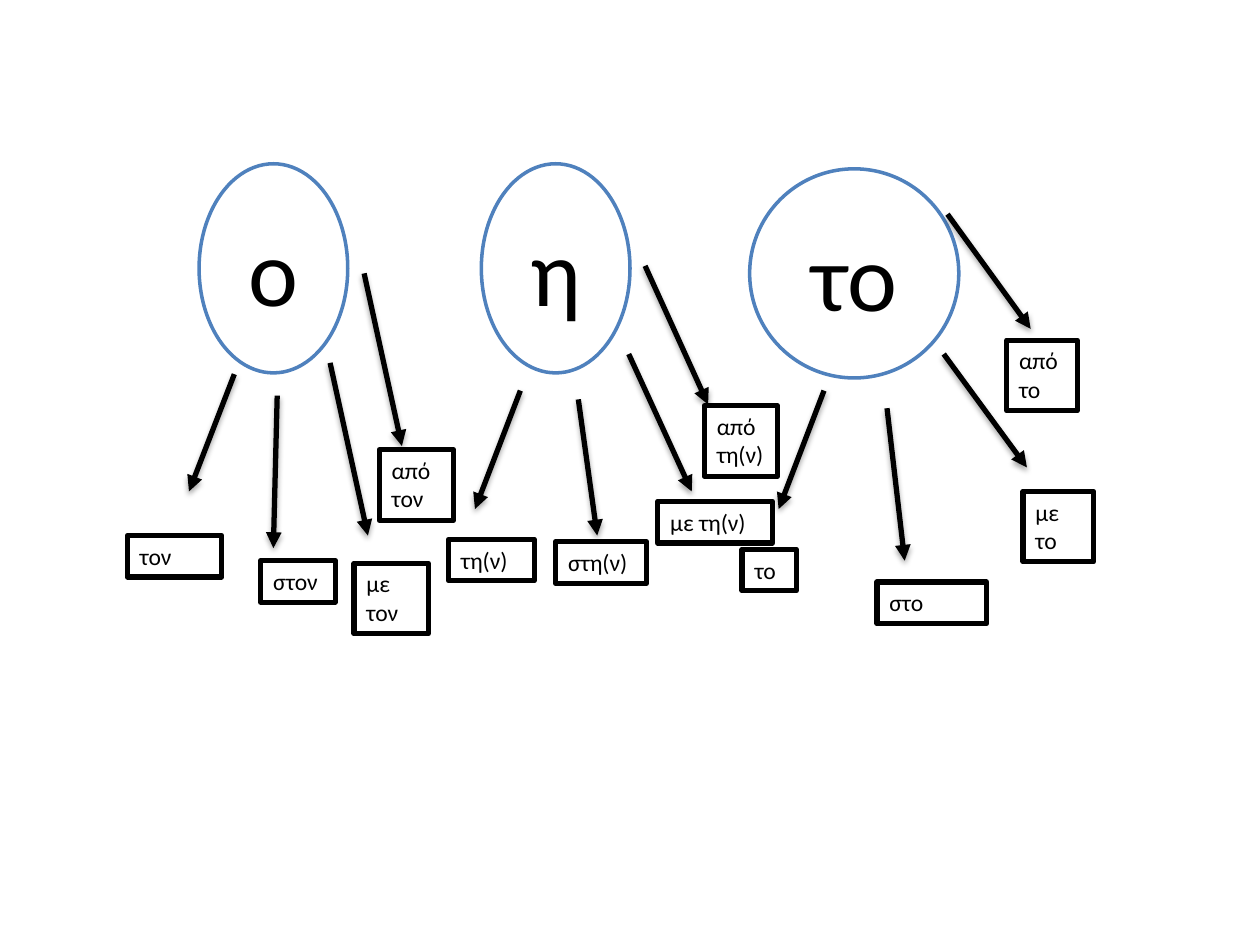
from lxml.etree import SubElement
from pptx import Presentation
from pptx.dml.color import RGBColor
from pptx.enum.shapes import MSO_CONNECTOR as CONN, MSO_SHAPE as SHAPE
from pptx.enum.text import MSO_ANCHOR as ANCHOR, PP_ALIGN as ALIGN
from pptx.oxml.ns import qn
from pptx.util import Pt

PX = 9144
FONT = "Calibri"
COLORS = {"paper": "FFFFFF", "ink": "000000", "ring": "4F81BD"}

ARTICLES = [
    ("o", (158, 130, 118, 166), [
        ("τον", (28, 167, -8, 260), (-57, 295, 75, 33)),
        ("στον", (62, 184, 59, 305), (49, 315, 59, 33)),
        ("με τον", (104, 158, 134, 295), (123, 317, 59, 56)),
        ("από τον", (131, 87, 161, 224), (143, 227, 59, 56)),
    ]),
    ("η", (382, 130, 118, 166), [
        ("τη(ν)", (31, 180, -5, 274), (-26, 298, 68, 33)),
        ("στη(ν)", (77, 187, 92, 295), (59, 300, 72, 33)),
        ("με τη(ν)", (117, 151, 167, 260), (140, 268, 91, 33)),
        ("από τη(ν)", (130, 81, 180, 191), (177, 192, 58, 56)),
    ]),
    ("το", (595, 134, 166, 166), [
        ("το", (59, 176, 23, 270), (-6, 302, 43, 33)),
        ("στο", (109, 190, 123, 311), (101, 328, 87, 33)),
        ("με το", (154, 147, 220, 237), (217, 256, 56, 56)),
        ("από το", (157, 36, 223, 127), (204, 136, 56, 56)),
    ]),
]


def rgb(name):
    """Return the named colour."""
    return RGBColor.from_string(COLORS[name])


def add_word(s, kind, box, text, size, line, width, align, anchor):
    """Add a white outlined shape holding one word or phrase."""
    sp = s.shapes.add_shape(kind, *(v * PX for v in box))
    sp.shadow.inherit = False
    sp.fill.solid()
    sp.fill.fore_color.rgb = rgb("paper")
    sp.line.color.rgb = rgb(line)
    sp.line.width = Pt(width)
    tf = sp.text_frame
    tf.word_wrap = True
    tf.vertical_anchor = anchor
    tf.text = text
    p = tf.paragraphs[0]
    p.alignment = align
    font = p.runs[0].font
    font.name = FONT
    font.size = Pt(size)
    font.color.rgb = rgb("ink")


def add_arrow(s, ends):
    """Add a black arrow with a soft shadow below it."""
    c = s.shapes.add_connector(CONN.STRAIGHT, *(v * PX for v in ends))
    c.line.color.rgb = rgb("ink")
    c.line.width = Pt(3)
    SubElement(c.line._get_or_add_ln(), qn("a:tailEnd"), type="triangle")
    effects = SubElement(c._element.spPr, qn("a:effectLst"))
    shadow = SubElement(effects, qn("a:outerShdw"), blurRad="40000",
                        dist="23000", dir="5400000", rotWithShape="0")
    color = SubElement(shadow, qn("a:srgbClr"), val=COLORS["ink"])
    SubElement(color, qn("a:alpha"), val="35000")


def add_article(s, box, article, branches):
    """Add an article in its ellipse, with arrows to its labelled forms."""
    x, y = box[:2]
    add_word(s, SHAPE.OVAL, box, article, 54, "ring", 2,
             ALIGN.CENTER, ANCHOR.MIDDLE)
    for form, (x1, y1, x2, y2), (left, top, w, h) in branches:
        add_arrow(s, (x + x1, y + y1, x + x2, y + y2))
        add_word(s, SHAPE.RECTANGLE, (x + left, y + top, w, h), form, 13.5,
                 "ink", 3, ALIGN.LEFT, ANCHOR.TOP)


def main():
    """Build the slide of articles and save it."""
    prs = Presentation()
    prs.slide_width, prs.slide_height = 1000 * PX, 750 * PX
    s = prs.slides.add_slide(prs.slide_layouts[6])
    for article, box, branches in ARTICLES:
        add_article(s, box, article, branches)
    prs.save("out.pptx")


if __name__ == "__main__":
    main()
